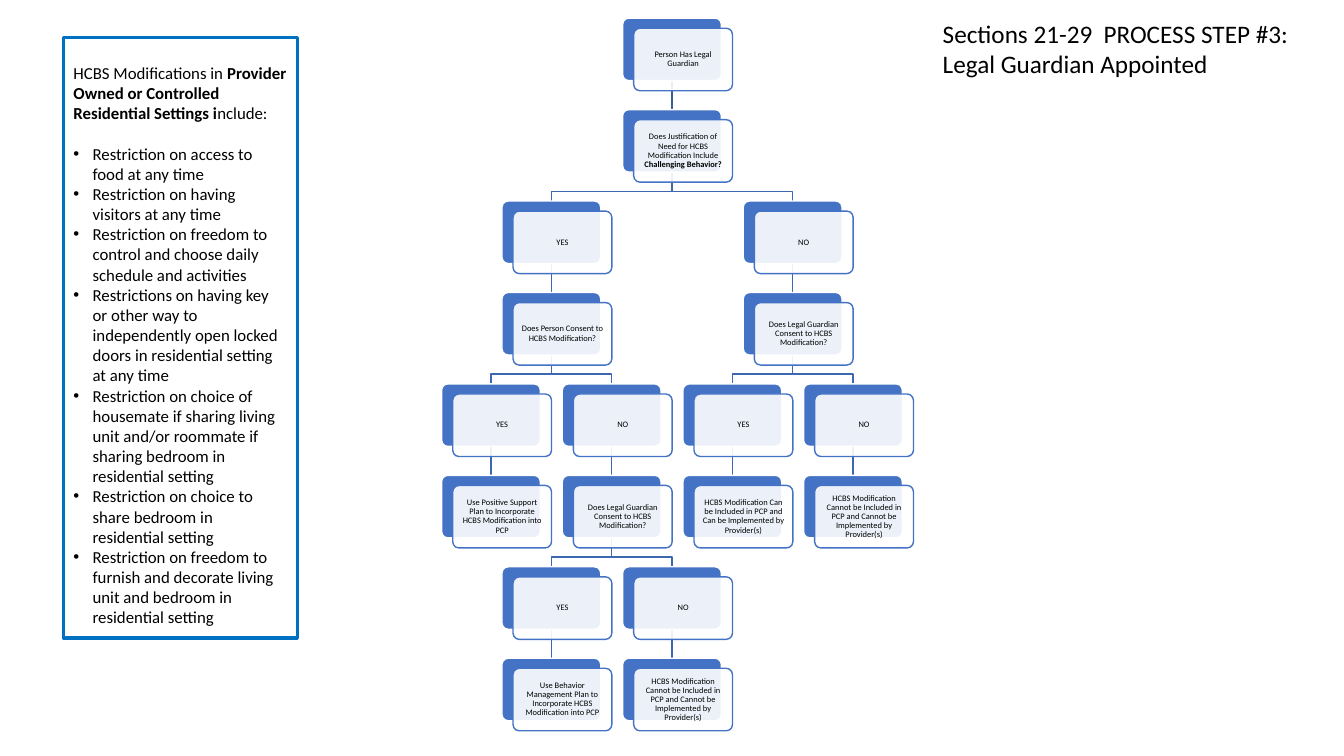
from lxml import etree
from pptx import Presentation
from pptx.dml.color import RGBColor
from pptx.enum import shapes, text
from pptx.oxml import ns
from pptx.util import Inches, Pt

BLUE = RGBColor(0x44, 0x72, 0xC4)
LINK = RGBColor(0x3E, 0x67, 0xB2)
STEM = RGBColor(0x36, 0x5B, 0x9D)
EDGE = RGBColor(0x00, 0x70, 0xC0)
WHITE = RGBColor(0xFF, 0xFF, 0xFF)
BLACK = RGBColor(0, 0, 0)

FONT = "Calibri"
COLS, ROWS = 7, 8
CARD_W, CARD_H = 0.98, 0.62
SHIFT_X, SHIFT_Y = 0.11, 0.1
DROP = 0.19

ASK = "Does Legal Guardian Consent to HCBS Modification?"
DENY = ("HCBS Modification Cannot be Included in PCP and "
        "Cannot be Implemented by Provider(s)")

NODES = {
    (3, 0): (None, ["Person Has Legal Guardian"]),
    (3, 1): ((3, 0), ["Does Justification of Need for HCBS Modification Include ",
                      "Challenging Behavior?"]),
    (1, 2): ((3, 1), ["YES"]),
    (1, 3): ((1, 2), ["Does Person Consent to HCBS Modification?"]),
    (0, 4): ((1, 3), ["YES"]),
    (0, 5): ((0, 4), ["Use Positive Support Plan to Incorporate HCBS "
                      "Modification into PCP"]),
    (2, 4): ((1, 3), ["NO"]),
    (2, 5): ((2, 4), [ASK]),
    (1, 6): ((2, 5), ["YES"]),
    (1, 7): ((1, 6), ["Use Behavior Management Plan to Incorporate HCBS "
                      "Modification into PCP"]),
    (3, 6): ((2, 5), ["NO"]),
    (3, 7): ((3, 6), [DENY]),
    (5, 2): ((3, 1), ["NO"]),
    (5, 3): ((5, 2), [ASK]),
    (4, 4): ((5, 3), ["YES"]),
    (4, 5): ((4, 4), ["HCBS Modification Can be Included in PCP and "
                      "Can be Implemented by Provider(s)"]),
    (6, 4): ((5, 3), ["NO"]),
    (6, 5): ((6, 4), [DENY]),
}

LEAD = ["HCBS Modifications in ",
        "Provider Owned or Controlled Residential Settings i", "nclude:"]
RULES = [
    "Restriction on access to food at any time",
    "Restriction on having visitors at any time",
    "Restriction on freedom to control and choose daily schedule and activities",
    "Restrictions on having key or other way to independently open locked "
    "doors in residential setting at any time",
    "Restriction on choice of housemate if sharing living unit and/or roommate "
    "if sharing bedroom in residential setting",
    "Restriction on choice to share bedroom in residential setting",
    "Restriction on freedom to furnish and decorate living unit and bedroom "
    "in residential setting",
]


def put(item, vals):
    for key, val in vals.items():
        setattr(item, key, val)


def write(frame, paras, size, style):
    for i, parts in enumerate(paras):
        para = frame.paragraphs[0] if i == 0 else frame.add_paragraph()
        put(para, style)
        for j, part in enumerate(parts):
            run = para.add_run()
            run.text = part
            put(run.font, {"size": Pt(size), "name": FONT, "bold": j == 1})
            run.font.color.rgb = BLACK


def block(slide, kind, box, fill, edge, width):
    shape = slide.shapes.add_shape(kind, *map(Inches, box))
    shape.shadow.inherit = False
    if fill is None:
        shape.fill.background()
    else:
        shape.fill.solid()
        shape.fill.fore_color.rgb = fill
    shape.line.color.rgb = edge
    shape.line.width = Pt(width)
    return shape


def card(slide, left, top, parts):
    kind = shapes.MSO_SHAPE.ROUNDED_RECTANGLE
    size = (CARD_W, CARD_H)
    back = block(slide, kind, (left, top, *size), BLUE, WHITE, 1)
    front = block(slide, kind, (left + SHIFT_X, top + SHIFT_Y, *size),
                  WHITE, BLUE, 1)
    for shape in (back, front):
        shape.adjustments[0] = 0.1
    tint = front.element.spPr.find(".//" + ns.qn("a:srgbClr"))
    etree.SubElement(tint, ns.qn("a:alpha"), val="90000")
    pad = Inches(0.05)
    put(front.text_frame, {
        "word_wrap": True, "vertical_anchor": text.MSO_ANCHOR.MIDDLE,
        "margin_left": pad, "margin_right": pad,
        "margin_top": pad, "margin_bottom": pad})
    write(front.text_frame, [parts], 6,
          {"alignment": text.PP_ALIGN.CENTER, "line_spacing": 0.9})


def link(slide, start, end, color):
    (x1, y1), (x2, y2) = [tuple(map(Inches, spot)) for spot in (start, end)]
    if x1 == x2:
        line = slide.shapes.add_connector(
            shapes.MSO_CONNECTOR.STRAIGHT, x1, y1, x2, y2)
        etree.SubElement(line.element.spPr, ns.qn("a:effectLst"))
    else:
        bend = y1 + Inches(DROP)
        pen = slide.shapes.build_freeform(x1, y1)
        pen.add_line_segments([(x1, bend), (x2, bend), (x2, y2)], close=False)
        line = pen.convert_to_shape()
        line.shadow.inherit = False
        line.fill.background()
    line.line.color.rgb = color
    line.line.width = Pt(1)


def tree(slide, left, top, width, height):
    step_x = (width - CARD_W - SHIFT_X) / (COLS - 1)
    step_y = (height - CARD_H - SHIFT_Y) / (ROWS - 1)
    spots = {(col, row): (left + col * step_x, top + row * step_y)
             for col, row in NODES}
    for key, (parent, _) in NODES.items():
        if parent:
            x1, y1 = spots[parent]
            x2, y2 = spots[key]
            link(slide, (x1 + CARD_W / 2, y1 + CARD_H),
                 (x2 + CARD_W / 2, y2), STEM if parent == (3, 0) else LINK)
    for key, (_, parts) in NODES.items():
        card(slide, *spots[key], parts)


def panel(slide, *box):
    shape = block(slide, shapes.MSO_SHAPE.RECTANGLE, box, None, EDGE, 2.25)
    frame = shape.text_frame
    put(frame, {"word_wrap": True, "vertical_anchor": text.MSO_ANCHOR.TOP,
                "margin_top": Inches(0.25)})
    write(frame, [LEAD] + [[rule] for rule in RULES], 12,
          {"alignment": text.PP_ALIGN.LEFT})
    for para in frame.paragraphs[1:]:
        props = para._p.get_or_add_pPr()
        props.set("marL", str(Inches(0.19)))
        props.set("indent", str(-Inches(0.19)))
        etree.SubElement(props, ns.qn("a:buFont"), typeface="Arial")
        etree.SubElement(props, ns.qn("a:buChar"), char="•")
    frame.paragraphs[1].space_before = Pt(14.6)


def head(slide, left, top, width, height):
    title = slide.shapes.title
    put(title, {"left": Inches(left), "top": Inches(top),
                "width": Inches(width), "height": Inches(height)})
    put(title.text_frame, {"word_wrap": True,
                           "auto_size": text.MSO_AUTO_SIZE.NONE,
                           "vertical_anchor": text.MSO_ANCHOR.TOP})
    write(title.text_frame,
          [["Sections 21-29  PROCESS STEP #3:"], ["Legal Guardian Appointed"]],
          18, {"alignment": text.PP_ALIGN.LEFT})


def main():
    deck = Presentation()
    put(deck, {"slide_width": Inches(13.33), "slide_height": Inches(7.5)})
    slide = deck.slides.add_slide(deck.slide_layouts[5])
    tree(slide, 4.38, 0.18, 4.68, 7.07)
    panel(slide, 0.63, 0.37, 2.32, 5.96)
    head(slide, 9.25, 0.13, 3.91, 0.71)
    deck.save("out.pptx")


if __name__ == "__main__":
    main()
